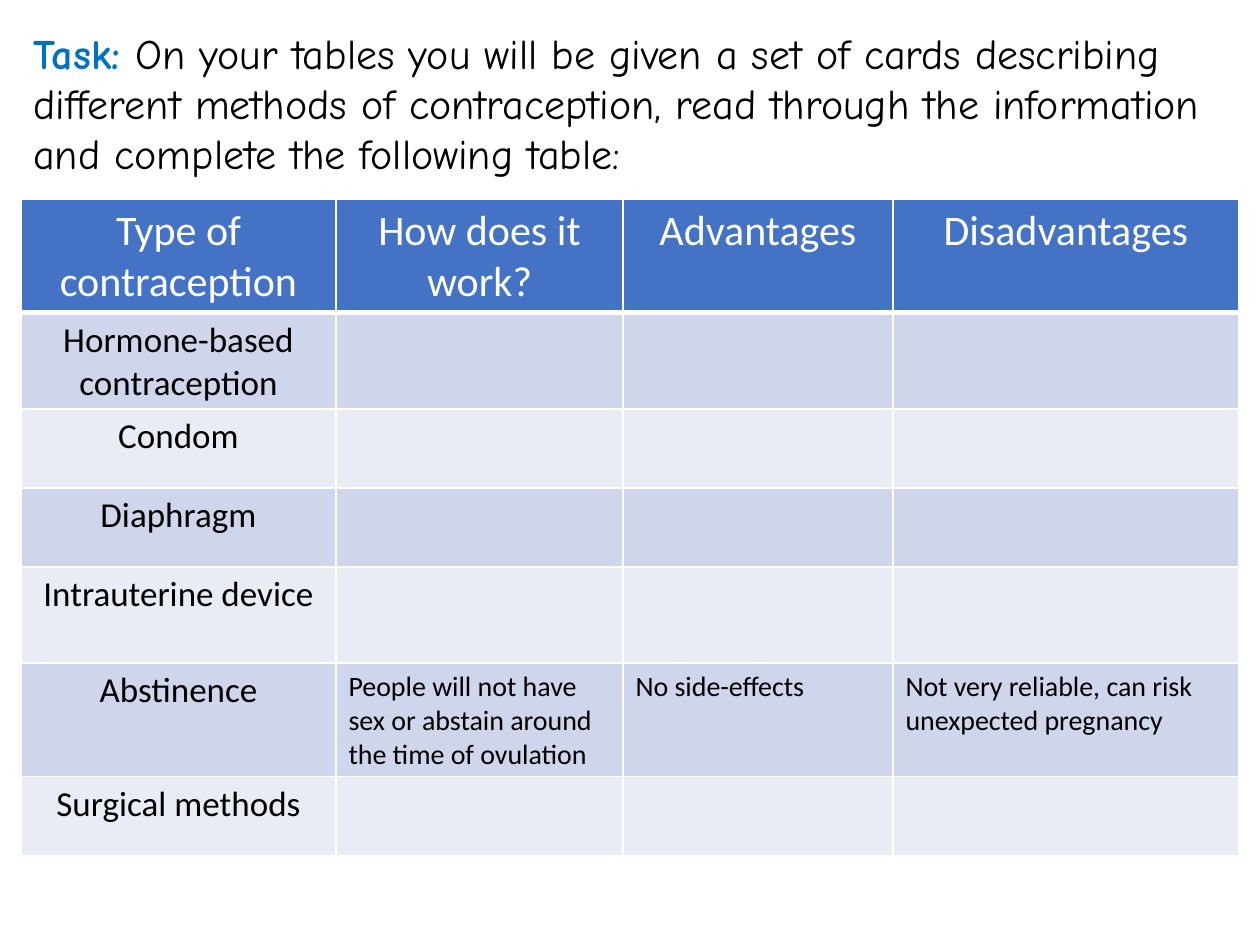
from lxml.etree import SubElement
from pptx import Presentation
from pptx.dml.color import RGBColor
from pptx.enum.text import MSO_AUTO_SIZE, PP_ALIGN
from pptx.oxml.ns import qn
from pptx.util import Emu, Pt

PX_PER_INCH = 126
COLORS = {
    "task": "0070C0",
    "text": "000000",
    "white": "FFFFFF",
    "header": "4472C4",
    "odd_row": "CFD5EA",
    "even_row": "E9EBF5",
}
COLUMN_WIDTHS = [315, 287, 270, 346]
ROW_HEIGHTS = [110, 96, 79, 79, 96, 79, 79]
ROWS = [
    ["Type of contraception", "How does it work?", "Advantages", "Disadvantages"],
    ["Hormone-based contraception", "", "", ""],
    ["Condom", "", "", ""],
    ["Diaphragm", "", "", ""],
    ["Intrauterine device", "", "", ""],
    [
        "Abstinence",
        "People will not have sex or abstain around the time of ovulation",
        "No side-effects",
        "Not very reliable, can risk unexpected pregnancy",
    ],
    ["Surgical methods", "", "", ""],
]


def px(length):
    """Turn whole pixels into EMU."""
    return Emu(round(length * 914400 / PX_PER_INCH))


def color(name):
    """Look up a named colour."""
    return RGBColor.from_string(COLORS[name])


def add_run(para, text, font, size, color_name, bold=False):
    """Append one formatted run to a paragraph."""
    span = para.add_run()
    span.text = text
    span.font.name = font
    span.font.size = Pt(size)
    span.font.bold = bold
    span.font.color.rgb = color(color_name)


def add_task(page):
    """Add the task instruction above the table."""
    box = page.shapes.add_textbox(px(21), px(21), px(1207), px(165))
    frame = box.text_frame
    frame.word_wrap = True
    frame.auto_size = MSO_AUTO_SIZE.SHAPE_TO_FIT_TEXT
    para = frame.paragraphs[0]
    add_run(para, "Task: ", "Comic Neue", 24, "task", bold=True)
    add_run(
        para,
        "On your tables you will be given a set of cards describing different "
        "methods of contraception, read through the information and complete "
        "the following table:",
        "Comic Neue", 24, "text",
    )


def set_borders(cell, bottom_width):
    """Draw white cell borders with the given bottom width in points."""
    properties = cell._tc.get_or_add_tcPr()
    widths = {"a:lnL": 1, "a:lnR": 1, "a:lnT": 1, "a:lnB": bottom_width}
    for tag, width in widths.items():
        line = SubElement(properties, qn(tag), w=str(Pt(width)))
        fill = SubElement(line, qn("a:solidFill"))
        SubElement(fill, qn("a:srgbClr"), val=COLORS["white"])


def fill_cell(cell, text, row, column):
    """Format one cell by its place in the table and write its text."""
    is_header = row == 0
    set_borders(cell, 3 if is_header else 1)
    band = "odd_row" if row % 2 else "even_row"
    cell.fill.solid()
    cell.fill.fore_color.rgb = color("header" if is_header else band)
    if not text:
        return
    para = cell.text_frame.paragraphs[0]
    if is_header or column == 0:
        para.alignment = PP_ALIGN.CENTER
    size = 24 if is_header else 20 if column == 0 else 16
    add_run(para, text, "Calibri", size, "white" if is_header else "text")


def add_methods_table(page):
    """Add the table of contraception methods."""
    table = page.shapes.add_table(
        len(ROWS), len(COLUMN_WIDTHS), px(21), px(199),
        px(sum(COLUMN_WIDTHS)), px(sum(ROW_HEIGHTS)),
    ).table
    for column, width in zip(table.columns, COLUMN_WIDTHS):
        column.width = px(width)
    for row, height in zip(table.rows, ROW_HEIGHTS):
        row.height = px(height)
    for row, texts in enumerate(ROWS):
        for column, text in enumerate(texts):
            fill_cell(table.cell(row, column), text, row, column)


def main():
    """Build and save the slide."""
    deck = Presentation()
    deck.slide_width = px(1260)
    deck.slide_height = px(945)
    page = deck.slides.add_slide(deck.slide_layouts[6])
    add_task(page)
    add_methods_table(page)
    deck.save("out.pptx")


if __name__ == "__main__":
    main()
